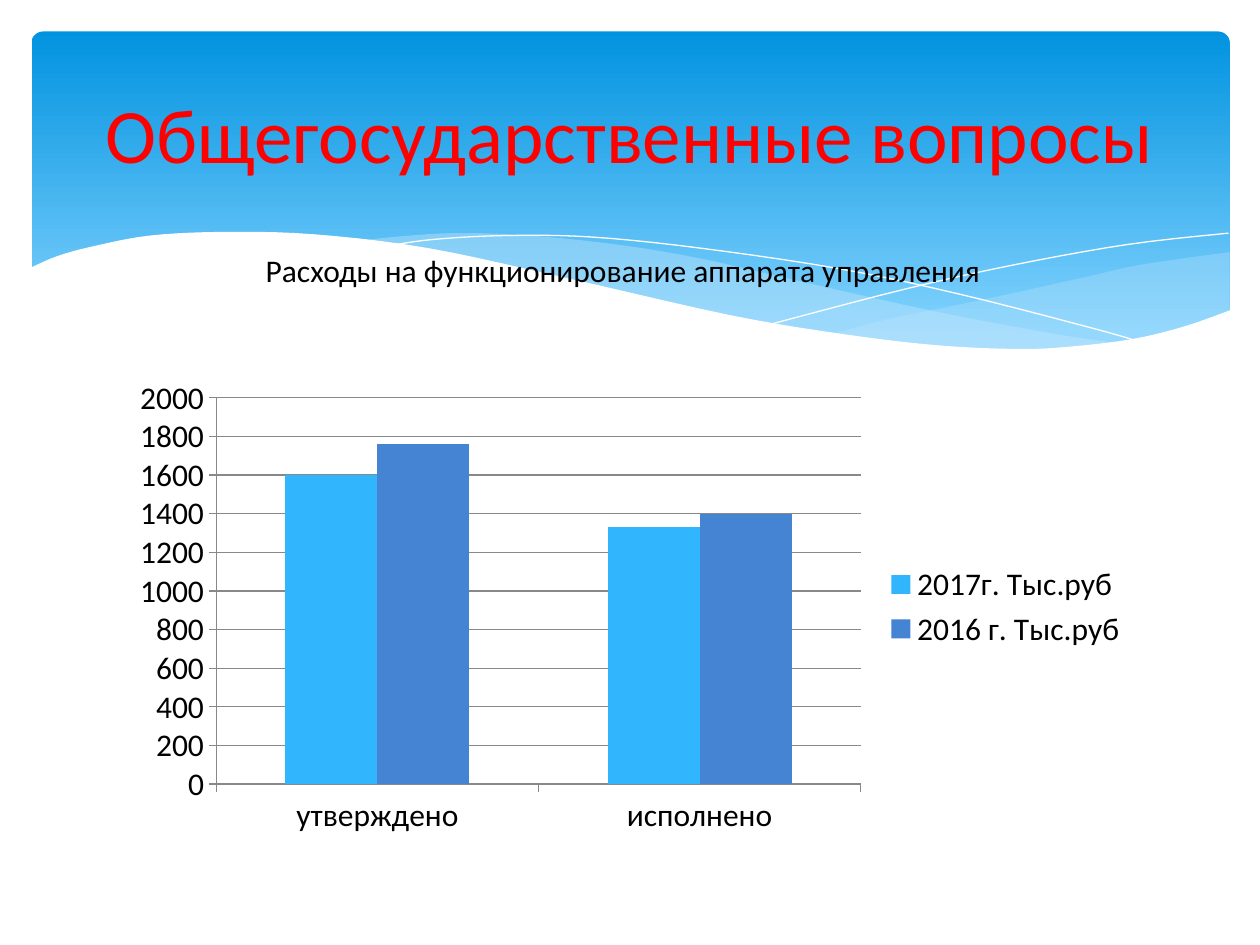
from dataclasses import dataclass
from typing import Optional

from lxml.etree import SubElement
from pptx import Presentation
from pptx.chart.data import CategoryChartData
from pptx.dml.color import RGBColor
from pptx.enum.chart import XL_CHART_TYPE, XL_LEGEND_POSITION, XL_TICK_MARK
from pptx.enum.shapes import MSO_SHAPE
from pptx.enum.text import MSO_ANCHOR, MSO_AUTO_SIZE, PP_ALIGN
from pptx.oxml.ns import qn
from pptx.slide import Slide
from pptx.util import Pt

FONT = "Calibri"
WHITE = RGBColor(0xFF, 0xFF, 0xFF)
BLACK = RGBColor(0, 0, 0)
RED = RGBColor(0xFF, 0, 0)
GRID_GREY = RGBColor(0x88, 0x88, 0x88)
BANNER_TOP = RGBColor(0x02, 0x93, 0xE0)
BANNER_BOTTOM = RGBColor(0x83, 0xD3, 0xFE)
WAVE_BLUE = RGBColor(0xC6, 0xE7, 0xFC)
SKY_BLUE = RGBColor(0x31, 0xB6, 0xFD)
ROYAL_BLUE = RGBColor(0x45, 0x84, 0xD3)

Point = tuple[float, float]


@dataclass(frozen=True)
class Wave:
    curves: list[list[Point]]
    fill: Optional[RGBColor] = None
    opacity: int = 100


@dataclass(frozen=True)
class Label:
    text: str
    box: tuple[float, float, float, float]
    size: float
    color: RGBColor
    align: PP_ALIGN
    anchor: MSO_ANCHOR
    wrap: bool


@dataclass(frozen=True)
class Year:
    name: str
    amounts: tuple[int, int]
    color: RGBColor


WAVES = [
    Wave([[(702.7, 144), (652.3, 151.2), (619.9, 158.4), (560.9, 171.4), (508.3, 182.2),
           (475.9, 190.8)],
          [(475.9, 190.8), (527, 197.3), (578.2, 200.2), (621.4, 198), (663.1, 190.8),
           (702.7, 177.8)]], WAVE_BLUE, 29),
    Wave([[(643, 196.6), (602.6, 190.8), (533.5, 177.8), (452.9, 159.8), (399.6, 147.6),
           (352.1, 139.7), (302.4, 134.6), (259.9, 133.2), (225.4, 135.4), (205.9, 137.5)],
          [(205.9, 137.5), (260.6, 146.2), (323.3, 159.8), (407.5, 178.6), (478.8, 191.5),
           (538.6, 198.7), (596.2, 200.2), (643, 196.6)]], WAVE_BLUE, 40),
    Wave([[(222.5, 140.4), (247.7, 136.8), (288.7, 134.6), (337.7, 135.4), (400.3, 141.8),
           (478.8, 153.4), (547.2, 167.8), (625.7, 187.9), (653, 195.8)]]),
    Wave([[(441.4, 185), (518.4, 164.9), (580.3, 151.2), (644.4, 139.7), (702, 133.2)]]),
    Wave([[(703.4, 177.1), (676.8, 186.5), (647.3, 193.7), (612, 198), (582.5, 199.4),
           (535.7, 197.3), (481, 190.8), (416.9, 180), (321.8, 158.4), (244.8, 141.8),
           (180, 133.9), (127.4, 132.5), (85.7, 134.6), (54.7, 140.4), (33.1, 146.2),
           (16.6, 153.4)],
          [(16.6, 236.9), (703.4, 236.9)]], WHITE),
]
LABELS = [
    Label("Общегосударственные вопросы", (36, 26.6, 648, 98.6), 44, RED,
          PP_ALIGN.CENTER, MSO_ANCHOR.MIDDLE, True),
    Label("Расходы на функционирование аппарата управления", (144.7, 139.7, 435.6, 28.8), 18,
          BLACK, PP_ALIGN.LEFT, MSO_ANCHOR.TOP, False),
]
STAGES = ["утверждено", "исполнено"]
YEARS = [
    Year("2017г. Тыс.руб", (1600, 1330), SKY_BLUE),
    Year("2016 г. Тыс.руб", (1760, 1400), ROYAL_BLUE),
]


def smooth_curve(anchors: list[Point], steps: int = 5) -> list[Point]:
    """Return points of a Catmull-Rom curve through the anchors."""
    if len(anchors) < 3:
        return anchors
    padded = [anchors[0], *anchors, anchors[-1]]
    points = [anchors[0]]
    for p0, p1, p2, p3 in zip(padded, padded[1:], padded[2:], padded[3:]):
        for step in range(1, steps + 1):
            t = step / steps
            x, y = (
                (2 * b + (c - a) * t + (2 * a - 5 * b + 4 * c - d) * t**2
                 + (3 * b - a - 3 * c + d) * t**3) / 2
                for a, b, c, d in zip(p0, p1, p2, p3)
            )
            points.append((x, y))
    return points


def draw_banner(slide: Slide) -> None:
    """Draw the rounded gradient banner behind the title."""
    banner = slide.shapes.add_shape(
        MSO_SHAPE.ROUNDED_RECTANGLE, Pt(18), Pt(18), Pt(684.7), Pt(194.4))
    banner.adjustments[0] = 0.034
    banner.shadow.inherit = False
    banner.line.fill.background()
    banner.fill.gradient()
    banner.fill.gradient_angle = 270
    stops = banner.fill.gradient_stops
    for stop, position, color in zip(stops, (0, 0.9), (BANNER_TOP, BANNER_BOTTOM)):
        stop.position = position
        stop.color.rgb = color


def draw_wave(slide: Slide, wave: Wave) -> None:
    """Draw a filled wave, or a white hairline when it has no fill."""
    points = [(Pt(x), Pt(y)) for curve in wave.curves for x, y in smooth_curve(curve)]
    builder = slide.shapes.build_freeform(*points[0])
    builder.add_line_segments(points[1:], close=wave.fill is not None)
    shape = builder.convert_to_shape()
    shape.shadow.inherit = False
    if wave.fill is None:
        shape.fill.background()
        shape.line.color.rgb = WHITE
        shape.line.width = Pt(0)
        return
    shape.line.fill.background()
    shape.fill.solid()
    shape.fill.fore_color.rgb = wave.fill
    if wave.opacity < 100:
        color = shape.fill._xPr.find(qn("a:solidFill"))[0]
        SubElement(color, qn("a:alpha"), val=str(wave.opacity * 1000))


def draw_spending_chart(slide: Slide, years: list[Year]) -> None:
    """Draw the clustered columns comparing both years."""
    spending = CategoryChartData()
    spending.categories = STAGES
    for year in years:
        spending.add_series(year.name, year.amounts)
    chart = slide.shapes.add_chart(
        XL_CHART_TYPE.COLUMN_CLUSTERED, Pt(68.4), Pt(211), Pt(583.2), Pt(271.4), spending).chart
    chart.font.name = FONT
    chart.font.size = Pt(18)
    chart.font.color.rgb = BLACK
    chart.has_title = False
    chart.has_legend = True
    chart.legend.position = XL_LEGEND_POSITION.RIGHT
    chart.legend.include_in_layout = False
    for axis in (chart.category_axis, chart.value_axis):
        axis.major_tick_mark = XL_TICK_MARK.OUTSIDE
        axis.format.line.color.rgb = GRID_GREY
    chart.value_axis.has_major_gridlines = True
    chart.value_axis.major_gridlines.format.line.color.rgb = GRID_GREY
    columns = chart.plots[0]
    columns.gap_width = 150
    columns.vary_by_categories = False
    for series, year in zip(columns.series, years):
        series.format.fill.solid()
        series.format.fill.fore_color.rgb = year.color


def draw_label(slide: Slide, label: Label) -> None:
    """Draw one line of text."""
    frame = slide.shapes.add_textbox(*map(Pt, label.box)).text_frame
    frame.word_wrap = label.wrap
    frame.auto_size = MSO_AUTO_SIZE.NONE if label.wrap else MSO_AUTO_SIZE.SHAPE_TO_FIT_TEXT
    frame.vertical_anchor = label.anchor
    paragraph = frame.paragraphs[0]
    paragraph.text = label.text
    paragraph.alignment = label.align
    paragraph.font.name = FONT
    paragraph.font.size = Pt(label.size)
    paragraph.font.color.rgb = label.color


def main() -> None:
    """Build and save the slide."""
    presentation = Presentation()
    presentation.slide_width, presentation.slide_height = Pt(720), Pt(540)
    slide = presentation.slides.add_slide(presentation.slide_layouts[6])
    draw_banner(slide)
    for wave in WAVES:
        draw_wave(slide, wave)
    draw_spending_chart(slide, YEARS)
    for label in LABELS:
        draw_label(slide, label)
    presentation.save("out.pptx")


if __name__ == "__main__":
    main()
